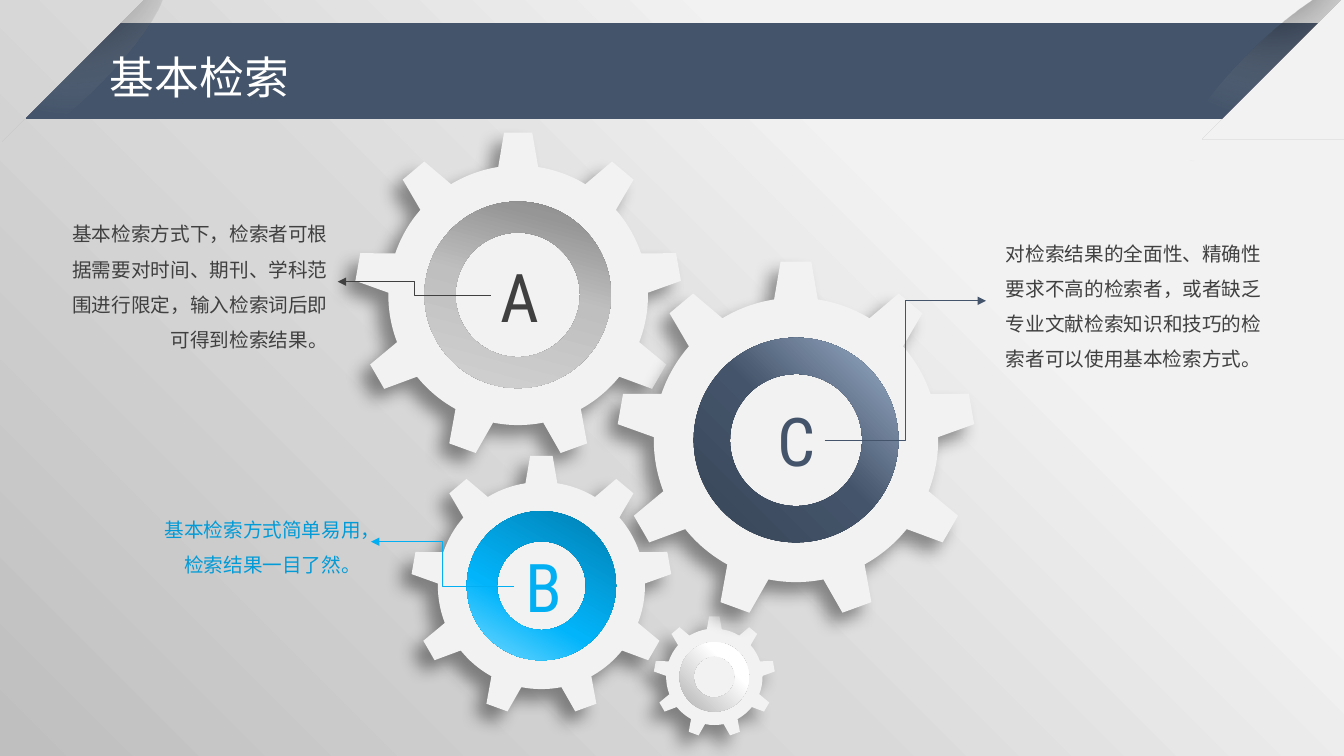
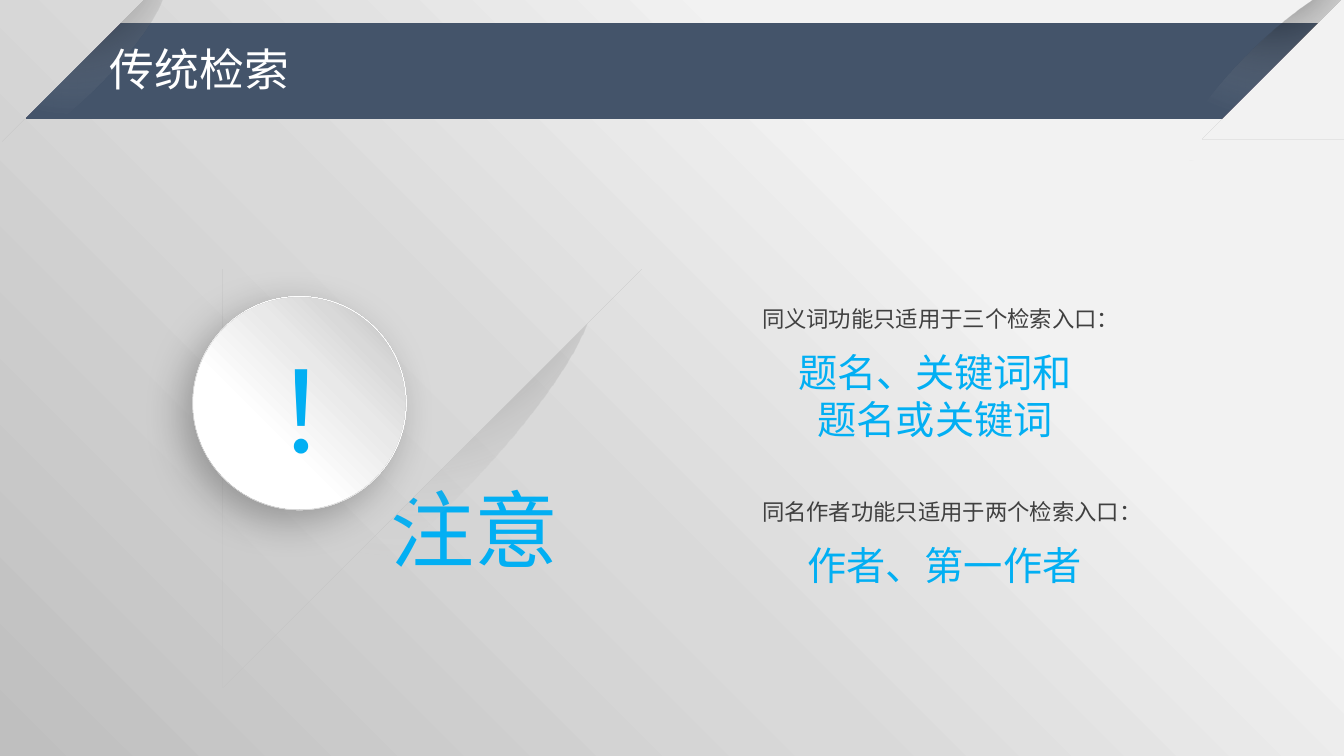
from dataclasses import dataclass

import pptx
import pptx.dml.color
import pptx.enum.shapes
import pptx.enum.text
import pptx.oxml
import pptx.oxml.ns
import pptx.util

KIND = pptx.enum.shapes.MSO_SHAPE
LINK = pptx.enum.shapes.MSO_CONNECTOR
ALIGN = pptx.enum.text.PP_ALIGN
FIT = pptx.enum.text.MSO_AUTO_SIZE
ANCHOR = pptx.enum.text.MSO_ANCHOR
SCALE = 9144  # EMU in one px, 100 px to the inch
LEFT, RIGHT = 1, 3  # connection sites


@dataclass(frozen=True)
class Theme:
    navy: str = "44546A"
    blue: str = "02AFF3"
    deep: str = "029BD7"
    dark: str = "404040"
    pale: str = "F2F2F2"
    white: str = "FFFFFF"
    han: str = "Noto Sans CJK SC"
    roman: str = "Roboto Condensed"
    note: int = 14
    lead: int = 16
    key: int = 28
    title: int = 32
    letter: int = 48
    alert: int = 60
    mark: int = 80


@dataclass(frozen=True)
class Blend:
    """Gradient: stops of (place, colour[, alpha]); linear if angle is set."""
    stops: tuple
    focus: tuple = (100, 0, 0, 100)
    angle: int = None


T = Theme()
PAGE = Blend(((9, T.pale), (29, T.pale), (59, "D9D9D9"), (100, "BFBFBF")))
SHADE = Blend(((0, "404040", 40), (32, "000000", 30), (100, "E7E6E6", 0)),
              (50, -80, 50, 180))
SILVER = Blend(((0, T.white), (35, T.white), (100, "A6A6A6")))
GREY = Blend(((0, "6F6F6F"), (23, "969696"), (48, "BFBFBF"), (100, "D9D9D9")), angle=315)
STEEL = Blend(((0, "D6DCE5"), (24, "8497B0"), (49, T.navy), (100, "333F50")))
AZURE = Blend(((0, "0175A3"), (61, "02B5FB"), (85, "61D2FE")), angle=315)
RIM = Blend(((0, T.white), (35, T.white), (100, "BFBFBF")))
DISC = Blend(((0, T.white), (35, T.white), (63, "E9E9E9"), (79, "D9D9D9"),
              (95, "BFBFBF")), (0, 100, 100, 0))


def px(*values):
    return [pptx.util.Emu(value * SCALE) for value in values]


def rgb(code):
    return pptx.dml.color.RGBColor.from_string(code)


def apply(target, values):
    for name, value in values.items():
        setattr(target, name, value)


def node(text):
    """Parse XML whose root tag lacks the drawing namespace."""
    space = ' xmlns:a="http://schemas.openxmlformats.org/drawingml/2006/main"'
    cut = min(text.index(mark) for mark in " />" if mark in text)
    return pptx.oxml.parse_xml(text[:cut] + space + text[cut:])


def tint(code, alpha=100):
    return f'<a:srgbClr val="{code}"><a:alpha val="{alpha * 1000}"/></a:srgbClr>'


def grade(fill, owner, blend):
    fill.gradient()
    old = next(owner.iter(pptx.oxml.ns.qn("a:gradFill")))
    stops = "".join(f'<a:gs pos="{place * 1000}">{tint(*colour)}</a:gs>'
                    for place, *colour in blend.stops)
    if blend.angle is None:
        sides = " ".join(f'{side}="{value * 1000}"'
                         for side, value in zip("ltrb", blend.focus))
        way = f'<a:path path="circle"><a:fillToRect {sides}/></a:path>'
    else:
        way = f'<a:lin ang="{blend.angle * 60000}" scaled="0"/>'
    old.getparent().replace(old, node(
        f'<a:gradFill rotWithShape="1"><a:gsLst>{stops}</a:gsLst>{way}</a:gradFill>'))


def draw(shapes, kind, box, paint=None, turn=0, adjust=()):
    """Add a shape; without paint it shows the slide background."""
    shape = shapes.add_shape(kind, *px(*box))
    shape.rotation = turn
    shape.shadow.inherit = False
    shape.line.fill.background()
    for index, value in enumerate(adjust):
        shape.adjustments[index] = value
    if paint is None:
        shape.element.set("useBgFill", "1")
    elif isinstance(paint, Blend):
        grade(shape.fill, shape.element, paint)
    else:
        shape.fill.solid()
        shape.fill.fore_color.rgb = rgb(paint)
    return shape


def shadow(shape, alpha, blur, far, angle):
    effects = next(shape.element.iter(pptx.oxml.ns.qn("a:effectLst")))
    effects.append(node(
        f'<a:outerShdw blurRad="{blur * 12700}" dist="{far * 12700}" '
        f'dir="{angle * 60000}" algn="ctr" rotWithShape="0">'
        f'{tint("000000", alpha)}</a:outerShdw>'))


def write(shape, text, size, colour, face=T.han, wrap=True, **para):
    frame = shape.text_frame
    apply(frame, {"text": text, "word_wrap": wrap, "vertical_anchor": ANCHOR.TOP,
                  "auto_size": FIT.SHAPE_TO_FIT_TEXT})
    first = frame.paragraphs[0]
    apply(first, para)
    font = first.runs[0].font
    apply(font, {"size": pptx.util.Pt(size), "name": face})
    font.color.rgb = rgb(colour)
    first.runs[0]._r.get_or_add_rPr().append(node(f'<a:ea typeface="{face}"/>'))


def label(slide, box, *args, **form):
    shape = slide.shapes.add_textbox(*px(*box))
    write(shape, *args, **form)
    return shape


def corner(slide, slope, fold, turn):
    """A folded paper corner over its soft shade."""
    shapes = slide.shapes.add_group_shape().shapes
    draw(shapes, KIND.OVAL, slope, SHADE, turn + 225.5 if turn == 90 else turn - 134.5)
    draw(shapes, KIND.RIGHT_TRIANGLE, fold, turn=turn)


def begin(deck, title, top):
    """Add a slide with the shared backdrop, band, corners and title."""
    slide = deck.slides.add_slide(deck.slide_layouts[5])
    grade(slide.background.fill, slide.element, PAGE)
    draw(slide.shapes, KIND.RECTANGLE, (26, 23, 1307, 95), T.navy)
    corner(slide, (-51, 39, 247, 59), (2, 0, 140, 140), 90)
    corner(slide, (1139, 41, 247, 59), (1193, -2, 140, 140), 270)
    head = slide.shapes.title
    head.element.getparent().append(head.element)
    apply(head, dict(zip(("left", "top", "width", "height"), px(99, top, 200, 64))))
    write(head, title, T.title, T.white, wrap=False, alignment=ALIGN.LEFT)
    return slide


def gear(slide, left, top, size, ring, band, paint, turn):
    shapes = slide.shapes.add_group_shape().shapes
    wheel = draw(shapes, KIND.GEAR_9, (left, top, size, size), T.pale,
                 adjust=(0.105, 0.018))
    shadow(wheel, 40, 12, 11, 135)
    gap = (size - ring) // 2
    draw(shapes, KIND.DONUT, (left + gap, top + gap, ring, ring), paint, turn, (band,))


def link(slide, start, end, leave, colour):
    """Join two labels by a bent arrow that leaves by the given side."""
    line = slide.shapes.add_connector(LINK.ELBOW, 0, 0, 0, 0)
    line.begin_connect(start, leave)
    line.end_connect(end, LEFT + RIGHT - leave)
    line.line.color.rgb = rgb(colour)
    line.line.width = pptx.util.Pt(0.5)
    line.line._get_or_add_ln().append(node('<a:tailEnd type="triangle"/>'))
    line.element.spPr.append(node("<a:effectLst/>"))


def basic(deck):
    slide = begin(deck, "基本检索", 44)
    for wheel in (
        (648, 611, 121, 69, 0.202, SILVER, 165),
        (351, 130, 326, 185, 0.166, GREY, 150),
        (611, 258, 357, 203, 0.177, STEEL, 144.8),
        (407, 451, 260, 148, 0.202, AZURE, 165),
    ):
        gear(slide, *wheel)
    for letter, spot, colour, text, box, ink, leave in (
        ("A", (487, 248, 54, 91), T.dark,
         "基本检索方式下，检索者可根据需要对时间、期刊、学科范围进行限定，输入检索词后即可得到检索结果。",
         (43, 204, 292, 151), T.dark, LEFT),
        ("C", (761, 391, 57, 91), T.navy,
         "对检索结果的全面性、精确性要求不高的检索者，或者缺乏专业文献检索知识和技巧的检索者可以使用基本检索方式。",
         (978, 223, 283, 151), T.dark, RIGHT),
        ("B", (510, 536, 58, 91), T.blue,
         "基本检索方式简单易用，检索结果一目了然。",
         (135, 497, 233, 81), T.deep, LEFT),
    ):
        sign = label(slide, spot, letter, T.letter, colour, T.roman,
                     wrap=False, alignment=ALIGN.CENTER)
        note = label(slide, box, text, T.note, ink,
                     alignment=ALIGN.RIGHT, line_spacing=1.5)
        link(slide, sign, note, leave, colour)


def classic(deck):
    slide = begin(deck, "传统检索", 36)
    label(slide, (377, 469, 188, 111), "注意", T.alert, T.blue, wrap=False)
    corner(slide, (149, 400, 506, 120), (221, 267, 415, 415), 90)
    shapes = slide.shapes.add_group_shape().shapes
    rim = draw(shapes, KIND.OVAL, (191, 294, 212, 212), RIM)
    shadow(rim, 27, 29, 11, 133)
    draw(shapes, KIND.OVAL, (192, 295, 210, 210), DISC)
    label(slide, (261, 334, 132, 145), "！", T.mark, T.blue, wrap=False)
    for top, text in ((284, "同义词功能只适用于三个检索入口："),
                      (476, "同名作者功能只适用于两个检索入口：")):
        label(slide, (746, top, 377, 46), text, T.lead, T.dark, line_spacing=1.5)
    label(slide, (766, 341, 323, 104), "题名、关键词和题名或关键词", T.key, T.blue,
          alignment=ALIGN.CENTER)
    label(slide, (791, 532, 296, 57), "作者、第一作者", T.key, T.blue)


def main():
    deck = pptx.Presentation()
    deck.slide_width, deck.slide_height = px(1333, 750)
    basic(deck)
    classic(deck)
    deck.save("out.pptx")


if __name__ == "__main__":
    main()
